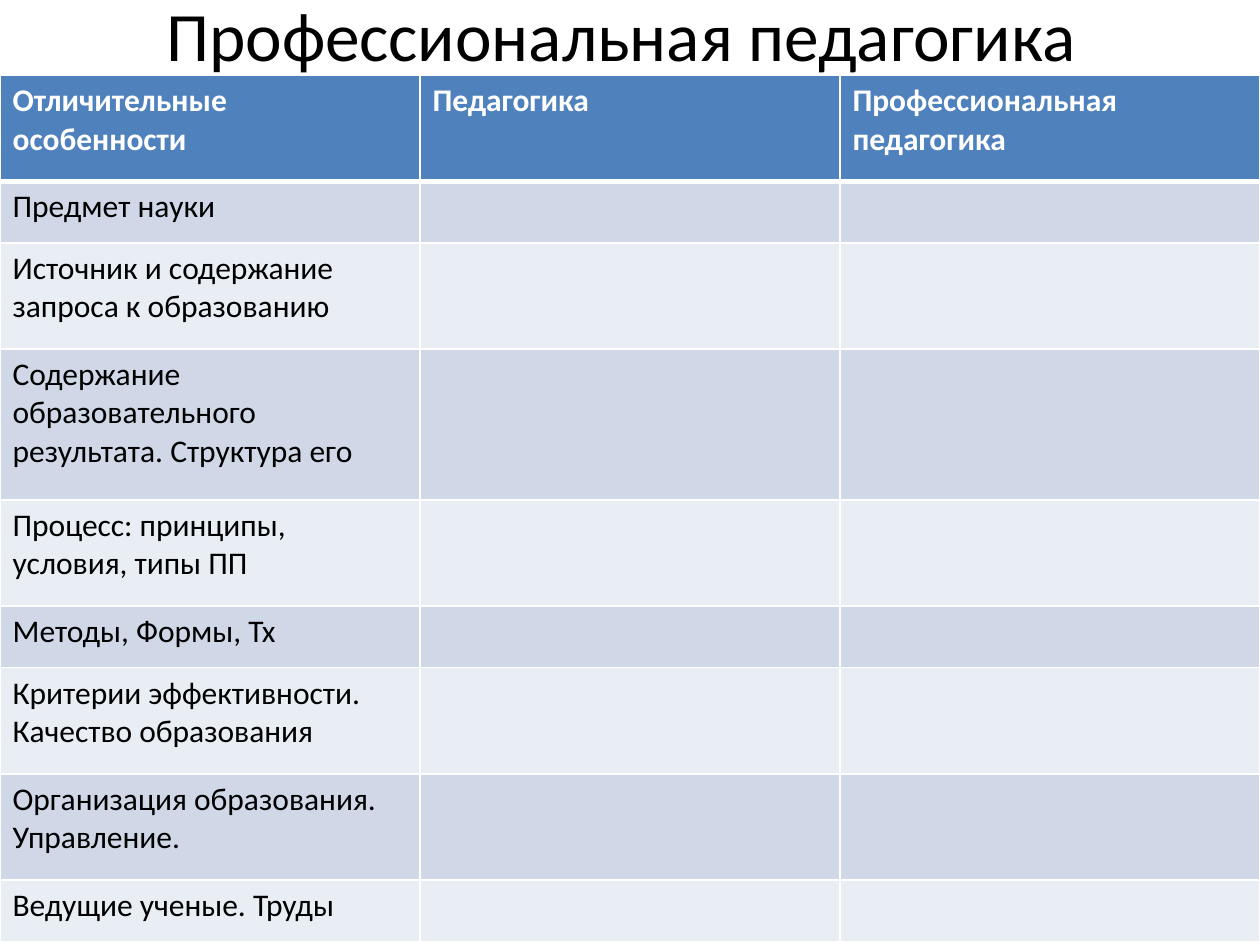
from dataclasses import dataclass

from lxml.etree import SubElement
from pptx import Presentation
from pptx.dml.color import RGBColor
from pptx.enum.text import MSO_ANCHOR, PP_ALIGN
from pptx.oxml.ns import qn
from pptx.util import Cm, Pt


@dataclass(frozen=True)
class Theme:
    font: str = "Calibri"
    title_size: float = 39.6
    table_size: float = 18
    ink: str = "000000"
    paper: str = "FFFFFF"
    header: str = "4F81BD"
    bands: tuple = ("D0D8E8", "E9EDF4")
    rule: float = 1
    header_rule: float = 3


class SlideBuilder:
    """Draw styled elements on the current slide."""

    def __init__(self, slide, theme):
        self.slide = slide
        self.theme = theme

    def style(self, paragraph, size, color, bold=False):
        font = paragraph.font
        font.name, font.size, font.bold = self.theme.font, Pt(size), bold
        font.color.rgb = RGBColor.from_string(color)

    def title(self, text, left, top, width, height):
        heading = self.slide.shapes.title
        heading.left, heading.top = Cm(left), Cm(top)
        heading.width, heading.height = Cm(width), Cm(height)
        frame = heading.text_frame
        frame.text = text
        frame.vertical_anchor = MSO_ANCHOR.MIDDLE
        frame.paragraphs[0].alignment = PP_ALIGN.CENTER
        self.style(frame.paragraphs[0], self.theme.title_size, self.theme.ink)

    def borders(self, cell, widths):
        properties = cell._tc.get_or_add_tcPr()
        for position, (side, width) in enumerate(widths.items()):
            line = SubElement(properties, qn(f"a:ln{side}"), w=str(Pt(width)))
            fill = SubElement(line, qn("a:solidFill"))
            SubElement(fill, qn("a:srgbClr"), val=self.theme.paper)
            properties.insert(position, line)

    def cell(self, cell, text, row):
        theme = self.theme
        is_header = row == 0
        cell.text = text
        color = theme.paper if is_header else theme.ink
        self.style(cell.text_frame.paragraphs[0], theme.table_size, color, is_header)
        cell.fill.solid()
        background = theme.header if is_header else theme.bands[(row - 1) % 2]
        cell.fill.fore_color.rgb = RGBColor.from_string(background)
        self.borders(cell, {
            "L": theme.rule,
            "R": theme.rule,
            "T": theme.header_rule if row == 1 else theme.rule,
            "B": theme.header_rule if is_header else theme.rule,
        })

    def table(self, headings, features, left, top, width):
        rows = [(headings, 2)] + [([name], lines) for name, lines in features]
        heights = [ROW_HEIGHTS[lines] for _, lines in rows]
        grid = self.slide.shapes.add_table(
            len(rows), len(headings), Cm(left), Cm(top), Cm(width), Cm(sum(heights))
        ).table
        for column in grid.columns:
            column.width = Cm(width / len(headings))
        for row, (texts, _) in enumerate(rows):
            grid.rows[row].height = Cm(heights[row])
            for column in range(len(headings)):
                text = texts[column] if column < len(texts) else ""
                self.cell(grid.cell(row, column), text, row)


ROW_HEIGHTS = {1: 1.24, 2: 2.14, 3: 3.04}
HEADINGS = ["Отличительные особенности", "Педагогика", "Профессиональная педагогика"]
FEATURES = [
    ("Предмет науки", 1),
    ("Источник и содержание запроса к образованию", 2),
    ("Содержание образовательного результата. Структура его", 3),
    ("Процесс: принципы, условия, типы ПП", 2),
    ("Методы, Формы, Тх", 1),
    ("Критерии эффективности. Качество образования", 2),
    ("Организация образования. Управление.", 2),
    ("Ведущие ученые. Труды", 1),
]


def main():
    presentation = Presentation()
    presentation.slide_width, presentation.slide_height = Cm(25.4), Cm(19.05)
    slide = presentation.slides.add_slide(presentation.slide_layouts[5])
    builder = SlideBuilder(slide, Theme())
    builder.title("Профессиональная педагогика", 1.09, 0, 22.86, 1.38)
    builder.table(HEADINGS, FEATURES, 0, 1.52, 25.4)
    presentation.save("out.pptx")


if __name__ == "__main__":
    main()
